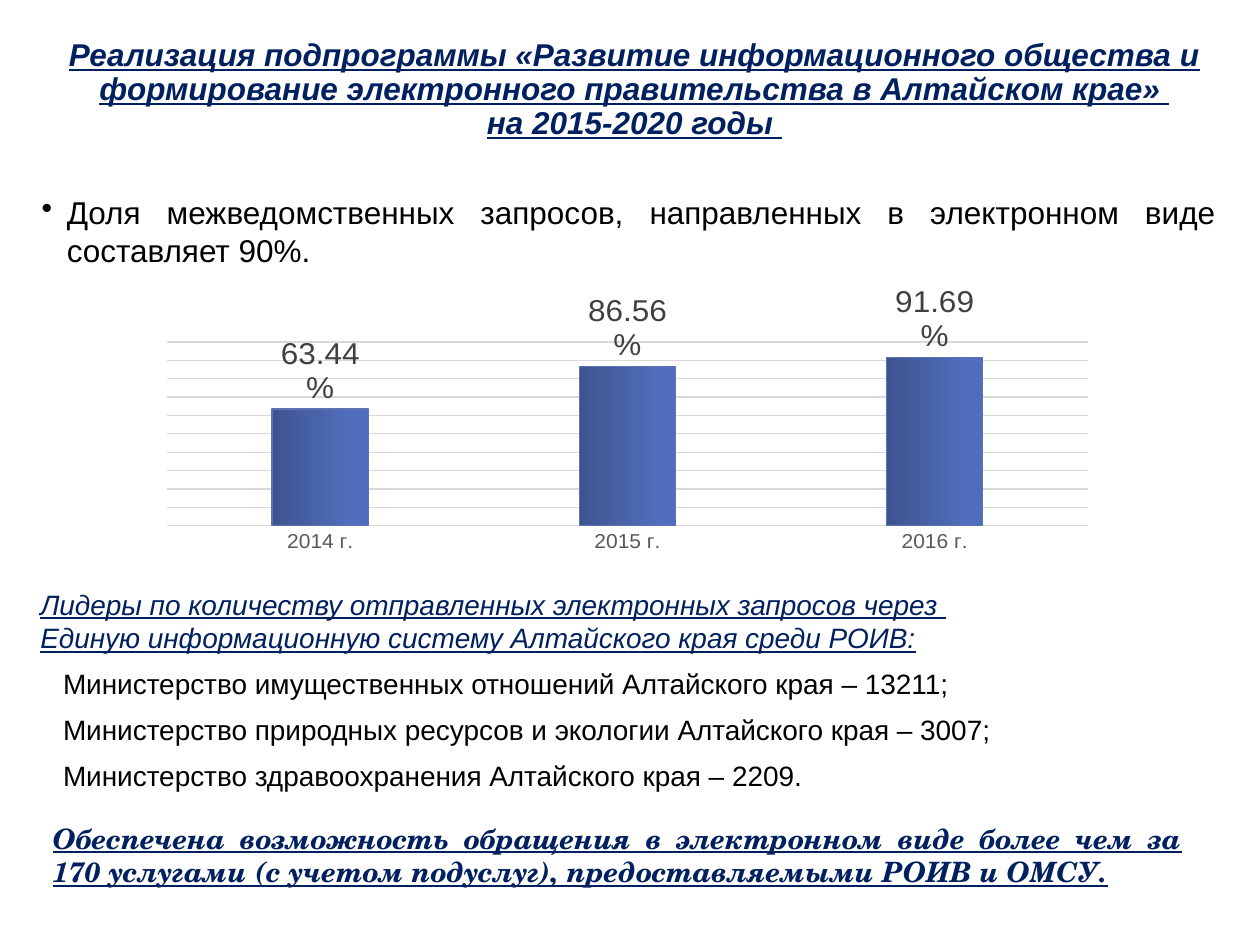
from copy import deepcopy
from dataclasses import dataclass

from lxml import etree
from pptx import Presentation
from pptx.chart.data import CategoryChartData
from pptx.dml.color import RGBColor
from pptx.enum.chart import XL_CHART_TYPE as ChartType
from pptx.enum.chart import XL_LABEL_POSITION as LabelPosition
from pptx.enum.chart import XL_TICK_MARK as TickMark
from pptx.enum.text import MSO_ANCHOR as Anchor
from pptx.enum.text import PP_ALIGN as Align
from pptx.oxml import parse_xml
from pptx.oxml.ns import nsdecls, qn
from pptx.util import Inches, Pt


@dataclass(frozen=True)
class Theme:
    font: str = "Arial"
    accent_font: str = "TeX Gyre Schola"
    navy: str = "002060"
    black: str = "000000"
    label: str = "404040"
    axis: str = "595959"
    grid: str = "D9D9D9"
    bar_line: str = "5C72B2"
    bar_stops: tuple = ((0, "3E5490"), (0.8, "516DBB"), (1, "4F6CBE"))
    large: int = 18
    medium: int = 16
    small: int = 12
    base: int = 10


THEME = Theme()
PERCENT = "0.00%"
LEADERS = (
    ("имущественных отношений", "13211;"),
    ("природных ресурсов и экологии", "3007;"),
    ("здравоохранения", "2209."),
)


def rgb(value):
    return RGBColor.from_string(value)


def style_font(font, size, color, name=THEME.font):
    font.name = name
    font.size = Pt(size)
    font.color.rgb = rgb(color)


def add_text_box(slide, left, top, width, height, margins=(0, 0)):
    frame = slide.shapes.add_textbox(
        Inches(left), Inches(top), Inches(width), Inches(height)
    ).text_frame
    frame.word_wrap = True
    frame.vertical_anchor = Anchor.TOP
    frame.margin_left = frame.margin_right = Inches(margins[0])
    frame.margin_top = frame.margin_bottom = Inches(margins[1])
    return frame


def set_indent(paragraph, left, first=0, bullet=None):
    properties = paragraph._p.get_or_add_pPr()
    properties.set("marL", str(Inches(left)))
    properties.set("indent", str(Inches(first)))
    if bullet:
        etree.SubElement(properties, qn("a:buChar")).set("char", bullet)


def add_lines(paragraph, lines, size, color, name=THEME.font,
              bold=False, italic=False, underline=False):
    for index, line in enumerate(lines):
        if index:
            paragraph.add_line_break()
        run = paragraph.add_run()
        run.text = line
        style_font(run.font, size, color, name)
        run.font.bold = bold
        run.font.italic = italic
        run.font.underline = underline


def add_title(slide):
    paragraph = add_text_box(slide, 0.07, 0.26, 9.93, 1.57, (0, 0.05)).paragraphs[0]
    paragraph.alignment = Align.CENTER
    paragraph.line_spacing = 0.9
    add_lines(paragraph, (
        "Реализация подпрограммы «Развитие информационного общества и "
        "формирование электронного правительства в Алтайском крае» ",
        "на 2015-2020 годы ",
    ), THEME.large, THEME.navy, bold=True, italic=True, underline=True)


def add_share(slide):
    paragraph = add_text_box(slide, 0.33, 1.53, 9.32, 0.85).paragraphs[0]
    set_indent(paragraph, 0.2, -0.2, "•")
    paragraph.alignment = Align.JUSTIFY
    add_lines(paragraph, (
        "Доля межведомственных запросов, направленных в электронном виде составляет 90%.",
    ), THEME.large, THEME.black)


def add_leaders(slide):
    frame = add_text_box(slide, 0.32, 4.66, 9.32, 1.57)
    heading = frame.paragraphs[0]
    heading.space_after = Pt(7)
    add_lines(heading, (
        "Лидеры по количеству отправленных электронных запросов через ",
        "Единую информационную систему Алтайского края среди РОИВ:",
    ), THEME.medium, THEME.navy, italic=True, underline=True)
    for ministry, count in LEADERS:
        paragraph = frame.add_paragraph()
        set_indent(paragraph, 0.18)
        paragraph.alignment = Align.JUSTIFY
        paragraph.space_after = Pt(7)
        add_lines(paragraph, (f"Министерство {ministry} Алтайского края – {count}",),
                  THEME.medium, THEME.black)


def add_conclusion(slide):
    paragraph = add_text_box(slide, 0.32, 6.47, 9.16, 0.64, (0.1, 0.05)).paragraphs[0]
    paragraph.alignment = Align.JUSTIFY
    add_lines(paragraph, (
        "Обеспечена возможность обращения в электронном виде более чем за "
        "170 услугами (с учетом подуслуг), предоставляемыми РОИВ и ОМСУ.",
    ), THEME.medium, THEME.navy, THEME.accent_font, bold=True, italic=True, underline=True)


def fill_gradient(fill, stops):
    fill.gradient()
    fill.gradient_angle = 0
    first = fill.gradient_stops[0]._gs
    first.addnext(deepcopy(first))
    for stop, (position, color) in zip(fill.gradient_stops, stops):
        stop.position = position
        stop.color.rgb = rgb(color)


def place_plot(chart, x, y, w, h):
    values = "".join(
        f'<c:{tag} val="{value}"/>'
        for tag, value in (("xMode", "edge"), ("yMode", "edge"),
                           ("x", x), ("y", y), ("w", w), ("h", h))
    )
    layout = parse_xml(
        f'<c:layout {nsdecls("c")}><c:manualLayout>'
        f'<c:layoutTarget val="inner"/>{values}</c:manualLayout></c:layout>'
    )
    area = chart._chartSpace.chart.plotArea
    for old in area.findall(qn("c:layout")):
        area.remove(old)
    area.insert(0, layout)


def add_request_chart(slide):
    data = CategoryChartData(number_format=PERCENT)
    data.categories = ("2014 г.", "2015 г.", "2016 г.")
    data.add_series("Series 1", (0.6344, 0.8656, 0.9169))
    chart = slide.shapes.add_chart(
        ChartType.COLUMN_CLUSTERED, Inches(1.17), Inches(2.26),
        Inches(7.62), Inches(2.12), data
    ).chart
    chart.has_title = False
    chart.has_legend = False
    style_font(chart.font, THEME.base, THEME.black)
    place_plot(chart, 0.02, 0.18, 0.96, 0.72)

    categories = chart.category_axis
    categories.major_tick_mark = TickMark.NONE
    style_font(categories.tick_labels.font, THEME.small, THEME.axis)
    values = chart.value_axis
    values.minimum_scale, values.maximum_scale, values.major_unit = 0, 1, 0.1
    values.visible = False
    for line in (categories.format.line, values.major_gridlines.format.line):
        line.color.rgb = rgb(THEME.grid)
        line.width = Pt(0.75)

    plot = chart.plots[0]
    plot.vary_by_categories = False
    plot.gap_width = 219
    plot.overlap = -27
    series = plot.series[0]
    fill_gradient(series.format.fill, THEME.bar_stops)
    series.format.line.color.rgb = rgb(THEME.bar_line)
    series.format.line.width = Pt(0.75)
    labels = series.data_labels
    labels.show_value = True
    labels.number_format = PERCENT
    labels.number_format_is_linked = False
    labels.position = LabelPosition.OUTSIDE_END
    style_font(labels.font, THEME.large, THEME.label)


def main():
    presentation = Presentation()
    presentation.slide_width = Inches(10)
    presentation.slide_height = Inches(7.5)
    slide = presentation.slides.add_slide(presentation.slide_layouts[6])
    add_leaders(slide)
    add_share(slide)
    add_request_chart(slide)
    add_conclusion(slide)
    add_title(slide)
    presentation.save("out.pptx")


if __name__ == "__main__":
    main()
